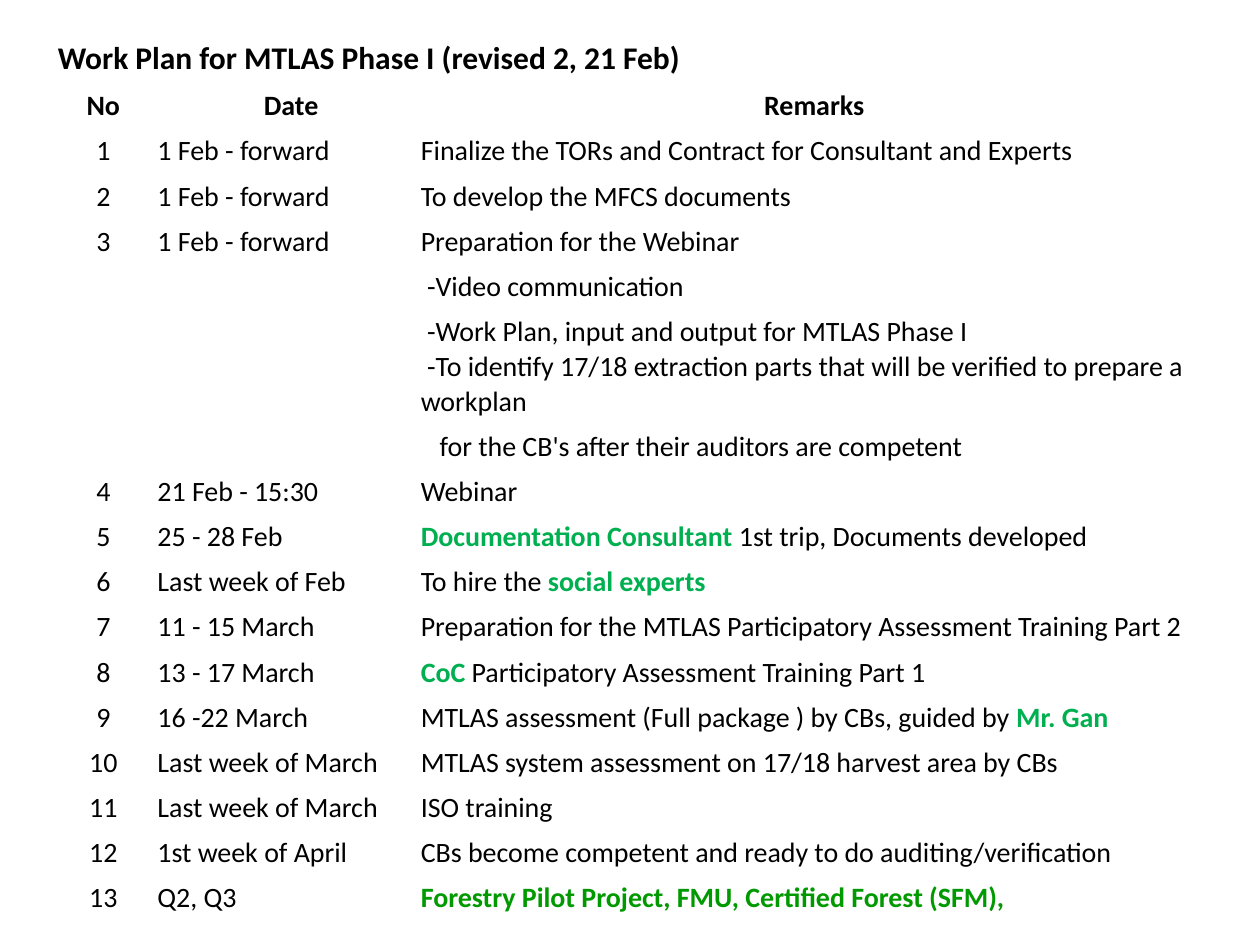
from pptx import Presentation
from pptx.dml.color import RGBColor
from pptx.enum.text import MSO_ANCHOR, PP_ALIGN
from pptx.util import Pt

HUES = {"ink": "000000", "green": "00B050", "leaf": "009900"}
COLS = [60.5, 150.5, 451]
TITLE = "Work Plan for MTLAS Phase I (revised 2, 21 Feb)"
HEADS = ["No", "Date", "Remarks"]
SPACE = 3.6  # first-line indent step

# Date, then remarks: each remark is (indent steps, runs), each run (text, hue)
PLAN = [
    ("1 Feb - forward", [(0, [("Finalize the TORs and Contract for Consultant and Experts", "ink")])]),
    ("1 Feb - forward", [(0, [("To develop the MFCS documents", "ink")])]),
    ("1 Feb - forward", [
        (0, [("Preparation for the Webinar", "ink")]),
        (1, [("-Video communication", "ink")]),
        (1, [("-Work Plan, input and output for MTLAS Phase I", "ink")]),
        (1, [("-To identify 17/18 extraction parts that will be verified to prepare a workplan", "ink")]),
        (3, [("for the CB's after their auditors are competent", "ink")]),
    ]),
    ("21 Feb - 15:30", [(0, [("Webinar", "ink")])]),
    ("25 - 28 Feb", [(0, [("Documentation Consultant ", "green"),
                          ("1st trip, Documents developed", "ink")])]),
    ("Last week of Feb", [(0, [("To hire the ", "ink"), ("social experts", "green")])]),
    ("11 - 15 March", [(0, [("Preparation for the MTLAS Participatory Assessment Training Part 2", "ink")])]),
    ("13 - 17 March", [(0, [("CoC ", "green"), ("Participatory Assessment Training Part 1", "ink")])]),
    ("16 -22 March", [(0, [("MTLAS assessment (Full package ) by CBs, guided by ", "ink"),
                           ("Mr. Gan", "green")])]),
    ("Last week of March", [(0, [("MTLAS system assessment on 17/18 harvest area by CBs", "ink")])]),
    ("Last week of March", [(0, [("ISO training", "ink")])]),
    ("1st week of April", [(0, [("CBs become competent and ready to do auditing/verification", "ink")])]),
    ("Q2, Q3", [(0, [("Forestry Pilot Project, FMU, Certified Forest (SFM),", "leaf")])]),
]


def write(cell, text, size=16, bold=False, hue="ink", align=PP_ALIGN.LEFT, steps=0):
    """Add one run to the cell's paragraph."""
    para = cell.text_frame.paragraphs[0]
    para.alignment = align
    if steps:
        props = para._p.get_or_add_pPr()
        props.set("marL", "0")
        props.set("indent", str(int(Pt(steps * SPACE))))
    run = para.add_run()
    run.text = text
    font = run.font
    font.name, font.size, font.bold = "Calibri", Pt(size), bold
    font.color.rgb = RGBColor.from_string(HUES[hue])


def make_grid(slide, left, top, width, height):
    """Add a plain table with a taller title row."""
    count = 2 + sum(len(notes) for _, notes in PLAN)
    frame = slide.shapes.add_table(count, len(COLS), Pt(left), Pt(top), Pt(width), Pt(height))
    grid = frame.table
    grid.first_row = grid.horz_banding = False
    for col, size in zip(grid.columns, COLS):
        col.width = Pt(size)
    for num, row in enumerate(grid.rows):
        row.height = Pt(25.8 if num else 27.4)
        for cell in row.cells:
            cell.fill.background()
            cell.vertical_anchor = MSO_ANCHOR.BOTTOM
            cell.margin_left = cell.margin_right = cell.margin_top = Pt(0.7)
            cell.margin_bottom = Pt(0)
    return grid


def fill_plan(slide, left, top, width, height):
    grid = make_grid(slide, left, top, width, height)

    # Title and column heads
    grid.cell(0, 0).merge(grid.cell(0, 2))
    write(grid.cell(0, 0), TITLE, size=18, bold=True, steps=1)
    for col, head in enumerate(HEADS):
        write(grid.cell(1, col), head, bold=True, align=PP_ALIGN.CENTER,
              steps=int(head == "Date"))

    # Numbered steps, with further remarks on rows of their own
    row = 2
    for num, (date, notes) in enumerate(PLAN, 1):
        write(grid.cell(row, 0), str(num), align=PP_ALIGN.CENTER)
        write(grid.cell(row, 1), date)
        for steps, runs in notes:
            for text, hue in runs:
                write(grid.cell(row, 2), text, hue=hue, bold=hue != "ink", steps=steps)
            row += 1


def main():
    deck = Presentation()
    deck.slide_width, deck.slide_height = Pt(720), Pt(540)
    slide = deck.slides.add_slide(deck.slide_layouts[6])
    fill_plan(slide, 28.8, 17.3, sum(COLS), 505)
    deck.save("out.pptx")


if __name__ == "__main__":
    main()
